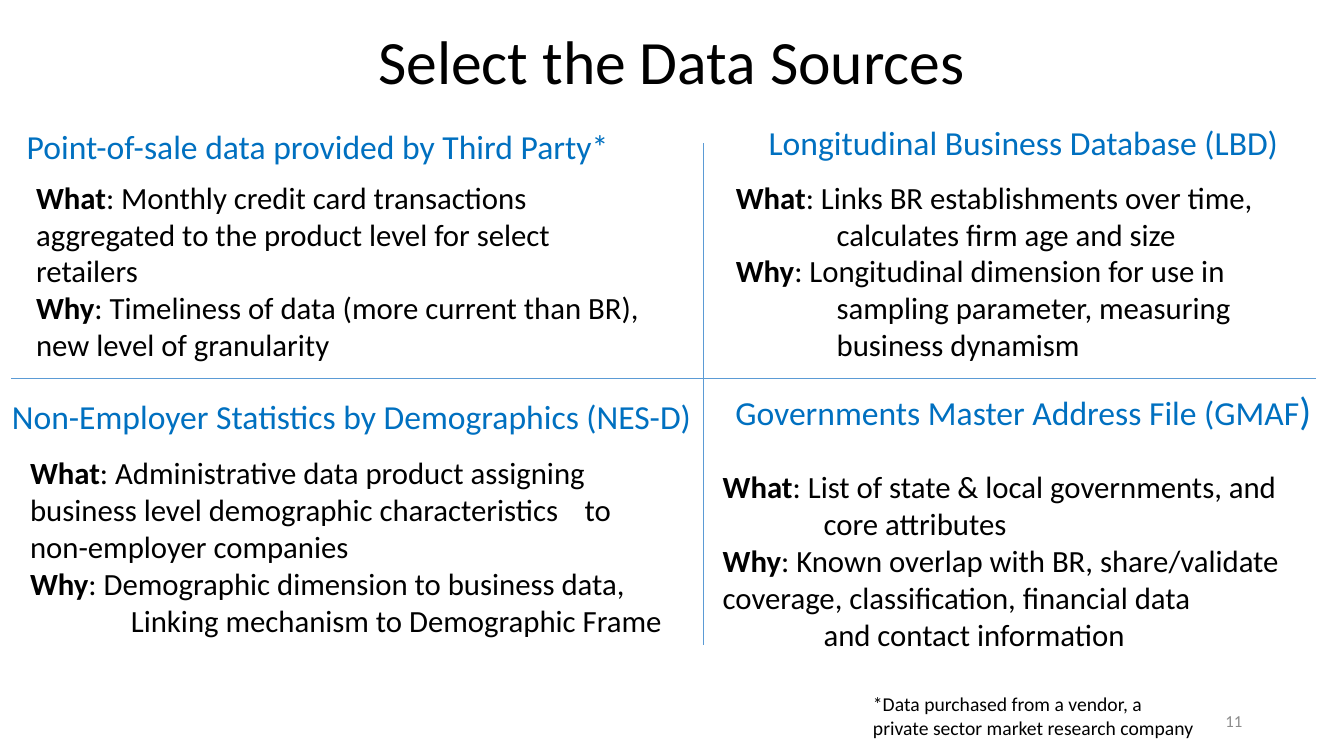
from lxml import etree
from pptx import Presentation
from pptx.dml.color import RGBColor
from pptx.enum.shapes import MSO_CONNECTOR
from pptx.enum.text import MSO_ANCHOR, PP_ALIGN
from pptx.oxml.ns import qn
from pptx.util import Inches, Pt

LEFT, CENTER, RIGHT = PP_ALIGN.LEFT, PP_ALIGN.CENTER, PP_ALIGN.RIGHT
TOP, MIDDLE = MSO_ANCHOR.TOP, MSO_ANCHOR.MIDDLE
STRAIGHT = MSO_CONNECTOR.STRAIGHT

FONT = "Calibri"
BLACK, BLUE, RULE, GRAY = "000000", "0070C0", "5B9BD5", "8C8C8C"
INDENT = 1

# Each source: heading runs, heading box, heading alignment and anchor, body box, body.
# Body: (label, line) pairs; None marks an indented line, "\n" a line break.
SOURCES = [
    ([("Point-of-sale data provided by Third Party*", 24)],
     (-0.02, 1.2, 6.34, 0.5), CENTER, MIDDLE, (0.26, 1.72, 6.5, 2.26),
     [("What", ": Monthly credit card transactions\n"
               "aggregated to the product level for select\nretailers"),
      ("Why", ": Timeliness of data (more current than BR),\n"
              "new level of granularity")]),
    ([("Longitudinal Business Database (LBD)", 24)],
     (6.98, 1.16, 6.34, 0.5), CENTER, MIDDLE, (7.2, 1.72, 6.31, 2.26),
     [("What", ": Links BR establishments over time,"),
      (None, "calculates firm age and size"),
      ("Why", ": Longitudinal dimension for use in"),
      (None, "sampling parameter, measuring"),
      (None, "business dynamism")]),
    ([("Non-Employer Statistics by Demographics (NES-D)", 24)],
     (0.02, 3.88, 7.24, 0.5), LEFT, TOP, (0.2, 4.45, 6.5, 1.95),
     [("What", ": Administrative data product assigning\n"
               "business level demographic characteristics\tto\n"
               "non-employer companies"),
      ("Why", ": Demographic dimension to business data,"),
      (None, "Linking mechanism to Demographic Frame")]),
    ([("Governments Master Address File (GMAF", 24), (")", 28)],
     (6.67, 3.78, 6.96, 0.57), CENTER, TOP, (7.07, 4.59, 6.5, 1.95),
     [("What", ": List of state & local governments, and"),
      (None, "core attributes"),
      ("Why", ": Known overlap with BR, share/validate\n"
              "coverage, classification, financial data"),
      (None, "and contact information")]),
]


def rgb(color):
    return RGBColor.from_string(color)


def add_run(p, text, size, color=BLACK, bold=False):
    r = p.add_run()
    r.text = text
    for name, value in dict(name=FONT, size=Pt(size), bold=bold).items():
        setattr(r.font, name, value)
    r.font.color.rgb = rgb(color)


def add_text_box(s, box, anchor=TOP):
    tf = s.shapes.add_textbox(*map(Inches, box)).text_frame
    tf.word_wrap = True
    tf.vertical_anchor = anchor
    return tf


def add_line_of_text(s, box, runs, color, align=LEFT, anchor=TOP):
    p = add_text_box(s, box, anchor).paragraphs[0]
    p.alignment = align
    for text, size in runs:
        add_run(p, text, size, color)


def add_title(s, text, box):
    title = s.shapes.title
    for name, value in zip(("left", "top", "width", "height"), box):
        setattr(title, name, Inches(value))
    title.text_frame.vertical_anchor = MIDDLE
    p = title.text_frame.paragraphs[0]
    p.alignment = CENTER
    p.line_spacing = 0.9
    add_run(p, text, 44)


def add_body(s, box, lines):
    tf = add_text_box(s, box)
    for i, (label, text) in enumerate(lines):
        p = tf.add_paragraph() if i else tf.paragraphs[0]
        if label:
            add_run(p, label, 22, bold=True)
        else:
            p._p.get_or_add_pPr().set("marL", str(Inches(INDENT)))
        for j, part in enumerate(text.split("\n")):
            if j:
                p.add_line_break()
            add_run(p, part, 22)


def add_source(s, heading, heading_box, align, anchor, body_box, body):
    add_line_of_text(s, heading_box, heading, BLUE, align, anchor)
    add_body(s, body_box, body)


def add_rule(s, *ends):
    line = s.shapes.add_connector(STRAIGHT, *map(Inches, ends))
    line.line.color.rgb = rgb(RULE)
    line.line.width = Pt(0.5)
    etree.SubElement(line._element.spPr, qn("a:effectLst"))


def main():
    prs = Presentation()
    prs.slide_width, prs.slide_height = Inches(13.33), Inches(7.5)
    s = prs.slides.add_slide(prs.slide_layouts[5])
    add_title(s, "Select the Data Sources", (0, 0.24, 13.33, 0.8))
    add_rule(s, 6.98, 1.42, 6.98, 6.4)
    add_rule(s, 0.11, 3.75, 13.05, 3.75)
    for source in SOURCES:
        add_source(s, *source)
    note = "*Data purchased from a vendor, a private sector market research company"
    add_line_of_text(s, (8.56, 6.82, 3.42, 0.57), [(note, 14)], BLACK)
    add_line_of_text(s, (9.42, 6.95, 3, 0.4), [("11", 12)], GRAY, RIGHT, MIDDLE)
    prs.save("out.pptx")


if __name__ == "__main__":
    main()
